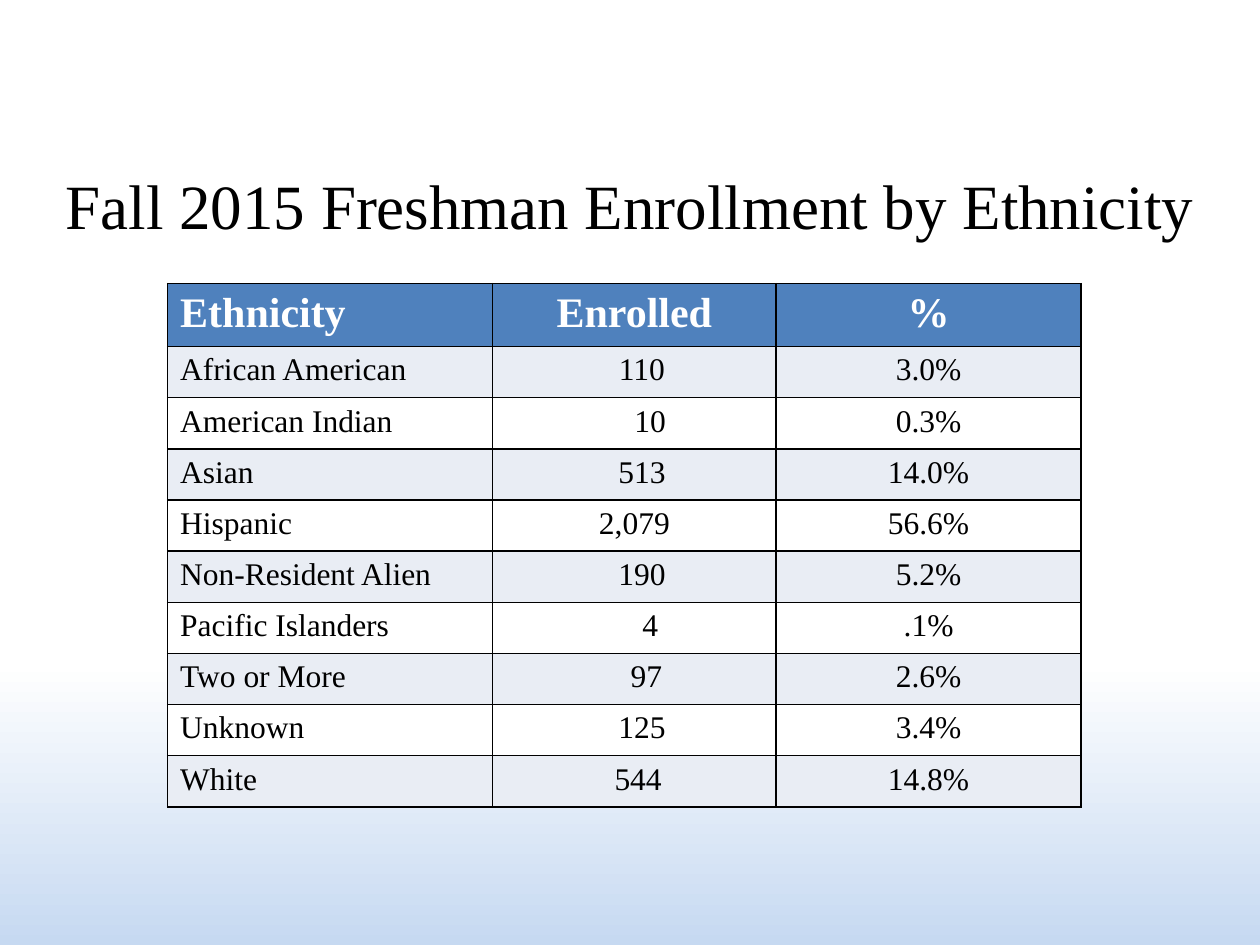
from typing import NamedTuple

from lxml import etree
from pptx import Presentation
from pptx.dml.color import RGBColor
from pptx.enum.text import MSO_ANCHOR, PP_ALIGN
from pptx.oxml.ns import qn
from pptx.util import Inches, Pt

LEFT, CENTER = PP_ALIGN.LEFT, PP_ALIGN.CENTER
MIDDLE = MSO_ANCHOR.MIDDLE
FONT = "Times New Roman"
COLORS = {
    "text": "000000",
    "header_text": "FFFFFF",
    "header": "4F81BD",
    "band": "E9EDF4",
    "plain": "FFFFFF",
    "border": "000000",
    "sky": "C6D9F1",
}
COLUMN_WIDTHS = (2.58, 2.25, 2.42)
CELL_MARGIN = 0.1


class EthnicityRow(NamedTuple):
    ethnicity: str
    enrolled: str
    percent: str
    indent: float = 0  # extra left margin that lines up the enrolled count


HEADER = EthnicityRow("Ethnicity", "Enrolled", "%")
ENROLLMENT = (
    EthnicityRow("African American", "110", "3.0%", 0.12),
    EthnicityRow("American Indian", "10", "0.3%", 0.25),
    EthnicityRow("Asian", "513", "14.0%", 0.12),
    EthnicityRow("Hispanic", "2,079", "56.6%"),
    EthnicityRow("Non-Resident Alien", "190", "5.2%", 0.12),
    EthnicityRow("Pacific Islanders", "4", ".1%", 0.25),
    EthnicityRow("Two or More", "97", "2.6%", 0.19),
    EthnicityRow("Unknown", "125", "3.4%", 0.12),
    EthnicityRow("White", "544", "14.8%", 0.06),
)


def rgb(name: str) -> RGBColor:
    return RGBColor.from_string(COLORS[name])


def style_text(paragraph, text: str, size: int, color: str, align, bold=False) -> None:
    paragraph.text = text
    paragraph.alignment = align
    font = paragraph.font
    font.name, font.size, font.bold = FONT, Pt(size), bold
    font.color.rgb = rgb(color)


def add_borders(cell) -> None:
    properties = cell._tc.get_or_add_tcPr()
    for side in ("a:lnL", "a:lnR", "a:lnT", "a:lnB"):
        line = etree.SubElement(properties, qn(side), w=str(Pt(1)))
        fill = etree.SubElement(line, qn("a:solidFill"))
        etree.SubElement(fill, qn("a:srgbClr"), val=COLORS["border"])


def fill_row(cells, row: EthnicityRow, size: int, color: str, fill: str, bold: bool) -> None:
    texts = (row.ethnicity, row.enrolled, row.percent)
    for cell, text, align in zip(cells, texts, (LEFT, CENTER, CENTER)):
        style_text(cell.text_frame.paragraphs[0], text, size, color, align, bold)
        add_borders(cell)
        cell.fill.solid()
        cell.fill.fore_color.rgb = rgb(fill)
    cells[1].margin_left = Inches(CELL_MARGIN + row.indent)


def main() -> None:
    prs = Presentation()
    prs.slide_width, prs.slide_height = Inches(10), Inches(7.5)
    slide = prs.slides.add_slide(prs.slide_layouts[6])

    # Background: white fading to light blue at the bottom
    background = slide.background.fill
    background.gradient()
    background.gradient_angle = 270
    stops = ((0.7, "plain"), (1, "sky"))
    for stop, (position, color) in zip(background.gradient_stops, stops):
        stop.position = position
        stop.color.rgb = rgb(color)

    # Title
    title = slide.shapes.add_textbox(Inches(0.5), Inches(1), Inches(9), Inches(1.25))
    frame = title.text_frame
    frame.word_wrap = True
    frame.vertical_anchor = MIDDLE
    frame.margin_left = frame.margin_right = 0
    style_text(frame.paragraphs[0], "Fall 2015 Freshman Enrollment by Ethnicity",
               36, "text", CENTER)

    # Enrollment table
    table = slide.shapes.add_table(
        len(ENROLLMENT) + 1, len(COLUMN_WIDTHS),
        Inches(1.33), Inches(2.25), Inches(sum(COLUMN_WIDTHS)), Inches(4.06)).table
    for column, width in zip(table.columns, COLUMN_WIDTHS):
        column.width = Inches(width)
    fill_row(table.rows[0].cells, HEADER, 24, "header_text", "header", True)
    for number, row in enumerate(ENROLLMENT, start=1):
        fill = "band" if number % 2 else "plain"
        fill_row(table.rows[number].cells, row, 18, "text", fill, False)

    prs.save("out.pptx")


if __name__ == "__main__":
    main()
